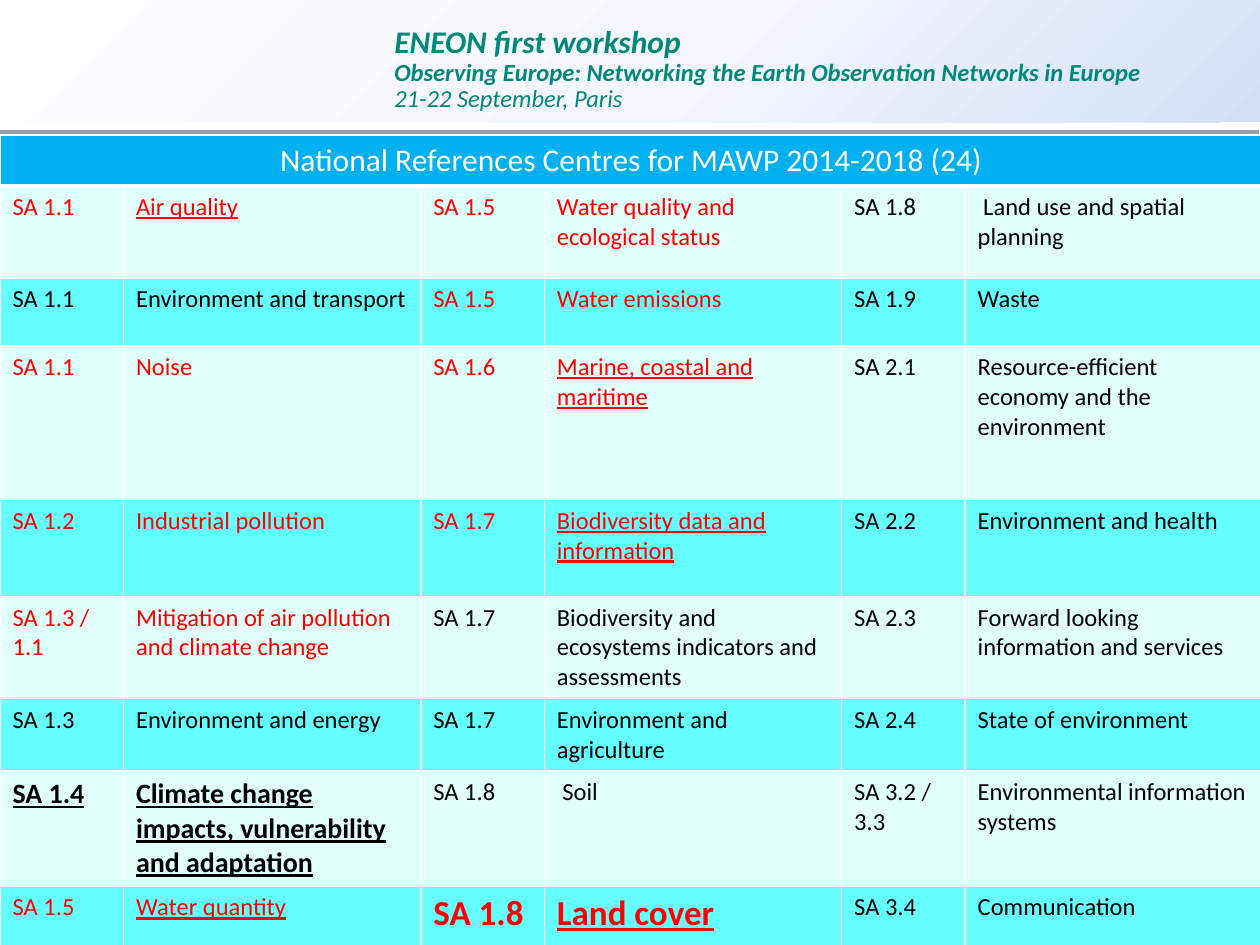
from dataclasses import dataclass
from typing import NamedTuple

import pptx
import pptx.dml.color
import pptx.enum.shapes
import pptx.enum.text
import pptx.oxml
import pptx.oxml.ns
import pptx.util
from pptx.util import Inches


@dataclass(frozen=True)
class Theme:
    font: str = "Calibri"
    white: str = "FFFFFF"
    black: str = "000000"
    red: str = "FF0000"
    teal: str = "00897A"
    rule: str = "969EAB"
    title_fill: str = "00B0F0"
    bands: tuple = ("E1FFFB", "66FFFF")
    banner_stops: tuple = ((0, "FEFEFF"), (55, "F4F7FD"), (100, "D5DFF8"))
    body: int = 14
    strong: int = 16
    title: int = 18
    large: int = 20


THEME = Theme()


class Look(NamedTuple):
    color: str = THEME.black
    size: int = THEME.body
    bold: bool = False
    italic: bool = False
    underline: bool = False


class Line(NamedTuple):
    text: str
    look: Look


class Entry(NamedTuple):
    code: str
    topic: str
    code_look: Look = Look()
    topic_look: Look = Look()


PLAIN = Look()
RED = Look(THEME.red)
RED_LINED = RED._replace(underline=True)
STRONG = Look(size=THEME.strong, bold=True, underline=True)
LARGE = Look(THEME.red, THEME.large, bold=True)
LARGE_LINED = LARGE._replace(underline=True)
BANNER = Look(THEME.teal, THEME.title, bold=True, italic=True)

BANNER_LINES = [
    Line("ENEON first workshop", BANNER),
    Line("Observing Europe: Networking the Earth Observation Networks in Europe",
         BANNER._replace(size=THEME.body)),
    Line("21-22 September, Paris", BANNER._replace(size=THEME.body, bold=False)),
]

TABLE_TITLE = "National References Centres for MAWP 2014-2018 (24)"
COLUMN_PAIR = (0.98, 2.36)
ROW_HEIGHTS = (0.36, 0.73, 0.54, 1.22, 0.77, 0.77, 0.54, 0.77, 0.54)
ENTRY_COLUMNS = [
    [
        Entry("SA 1.1", "Air quality", RED, RED_LINED),
        Entry("SA 1.1", "Environment and transport"),
        Entry("SA 1.1", "Noise", RED, RED),
        Entry("SA 1.2", "Industrial pollution", RED, RED),
        Entry("SA 1.3 / 1.1", "Mitigation of air pollution\nand climate change", RED, RED),
        Entry("SA 1.3", "Environment and energy"),
        Entry("SA 1.4", "Climate change impacts, vulnerability and adaptation",
              STRONG, STRONG),
        Entry("SA 1.5", "Water quantity", RED, RED_LINED),
    ],
    [
        Entry("SA 1.5", "Water quality and ecological status", RED, RED),
        Entry("SA 1.5", "Water emissions", RED, RED),
        Entry("SA 1.6", "Marine, coastal and maritime", RED, RED_LINED),
        Entry("SA 1.7", "Biodiversity data and information", RED, RED_LINED),
        Entry("SA 1.7", "Biodiversity and ecosystems indicators and assessments"),
        Entry("SA 1.7", "Environment and agriculture"),
        Entry("SA 1.8", " Soil"),
        Entry("SA 1.8", "Land cover", LARGE, LARGE_LINED),
    ],
    [
        Entry("SA 1.8", " Land use and spatial planning"),
        Entry("SA 1.9", "Waste"),
        Entry("SA 2.1", "Resource-efficient economy and the environment"),
        Entry("SA 2.2", "Environment and health"),
        Entry("SA 2.3", "Forward looking information and services"),
        Entry("SA 2.4", "State of environment"),
        Entry("SA 3.2 / 3.3", "Environmental information systems"),
        Entry("SA 3.4", "Communication"),
    ],
]


def rgb(color: str) -> pptx.dml.color.RGBColor:
    return pptx.dml.color.RGBColor.from_string(color)


def element(xml: str):
    """Parse one drawing element whose root tag starts with 'a:'."""
    head, tail = xml.split(">", 1)
    slash = "/" if head.endswith("/") else ""
    return pptx.oxml.parse_xml(
        f"{head.rstrip('/')} {pptx.oxml.ns.nsdecls('a')}{slash}>{tail}")


def style_paragraph(para, look: Look) -> None:
    for span in para.runs:
        font = span.font
        font.name = THEME.font
        font.size = pptx.util.Pt(look.size)
        font.bold = look.bold
        font.italic = look.italic
        font.underline = look.underline
        font.color.rgb = rgb(look.color)


def fill_banner(box) -> None:
    """Give the banner a circular gradient centred beyond its upper left corner."""
    stops = "".join(f'<a:gs pos="{place * 1000}"><a:srgbClr val="{color}"/></a:gs>'
                    for place, color in THEME.banner_stops)
    gradient = element(
        f'<a:gradFill><a:gsLst>{stops}</a:gsLst><a:path path="circle">'
        '<a:fillToRect l="-40000" t="-90000" r="140000" b="190000"/></a:path></a:gradFill>')
    box.fill.background()
    properties = box.fill._xPr
    properties.replace(properties.find(pptx.oxml.ns.qn("a:noFill")), gradient)


def add_banner(page) -> None:
    box = page.shapes.add_shape(pptx.enum.shapes.MSO_SHAPE.RECTANGLE,
                                0, 0, Inches(10), Inches(0.97))
    box.shadow.inherit = False
    box.line.fill.background()
    fill_banner(box)
    frame = box.text_frame
    frame.word_wrap = True
    frame.vertical_anchor = pptx.enum.text.MSO_ANCHOR.TOP
    frame.margin_left = Inches(3.13)
    frame.margin_right = Inches(0.13)
    frame.margin_top = Inches(0.27)
    frame.margin_bottom = Inches(0.06)
    frame.text = "\n".join(line.text for line in BANNER_LINES)
    for para, line in zip(frame.paragraphs, BANNER_LINES):
        para.alignment = pptx.enum.text.PP_ALIGN.LEFT
        para.line_spacing = pptx.util.Pt(15)
        style_paragraph(para, line.look)


def add_rule(page) -> None:
    rule = page.shapes.add_connector(pptx.enum.shapes.MSO_CONNECTOR.STRAIGHT,
                                     Inches(-0.01), Inches(1.07), Inches(9.99), Inches(1.07))
    rule.line.color.rgb = rgb(THEME.rule)
    rule.line.width = pptx.util.Pt(6)
    rule._element.spPr.append(element("<a:effectLst/>"))


def paint_cell(cell, color: str, top: int = 1, bottom: int = 1) -> None:
    """Fill a cell and border it in white, with widths in points."""
    cell.fill.solid()
    cell.fill.fore_color.rgb = rgb(color)
    widths = {"lnL": 1, "lnR": 1, "lnT": top, "lnB": bottom}
    for place, (side, width) in enumerate(widths.items()):
        cell._tc.tcPr.insert(place, element(
            f'<a:{side} w="{pptx.util.Pt(width)}"><a:solidFill>'
            f'<a:srgbClr val="{THEME.white}"/></a:solidFill></a:{side}>'))


def write_cell(cell, text: str, look: Look) -> None:
    cell.text_frame.text = text
    for para in cell.text_frame.paragraphs:
        style_paragraph(para, look)


def add_centres_table(page) -> None:
    widths = COLUMN_PAIR * len(ENTRY_COLUMNS)
    table = page.shapes.add_table(len(ROW_HEIGHTS), len(widths), 0, Inches(1.07),
                                  Inches(sum(widths)), Inches(sum(ROW_HEIGHTS))).table
    table.first_row = table.horz_banding = False
    for column, width in zip(table.columns, widths):
        column.width = Inches(width)
    for row, height in zip(table.rows, ROW_HEIGHTS):
        row.height = Inches(height)

    title = table.cell(0, 0)
    title.merge(table.cell(0, len(widths) - 1))
    for cell in table.rows[0].cells:
        paint_cell(cell, THEME.title_fill, bottom=3)
    write_cell(title, TABLE_TITLE, Look(THEME.white, THEME.title))
    title.vertical_anchor = pptx.enum.text.MSO_ANCHOR.MIDDLE
    title.text_frame.paragraphs[0].alignment = pptx.enum.text.PP_ALIGN.CENTER

    for pair, entries in enumerate(ENTRY_COLUMNS):
        for row, entry in enumerate(entries, start=1):
            code, topic = table.cell(row, 2 * pair), table.cell(row, 2 * pair + 1)
            for cell in (code, topic):
                paint_cell(cell, THEME.bands[(row - 1) % 2], top=3 if row == 1 else 1)
            write_cell(code, entry.code, entry.code_look)
            write_cell(topic, entry.topic, entry.topic_look)


def main() -> None:
    deck = pptx.Presentation()
    deck.slide_width, deck.slide_height = Inches(10), Inches(7.5)
    page = deck.slides.add_slide(deck.slide_layouts[6])
    add_banner(page)
    add_rule(page)
    add_centres_table(page)
    deck.save("out.pptx")


if __name__ == "__main__":
    main()
